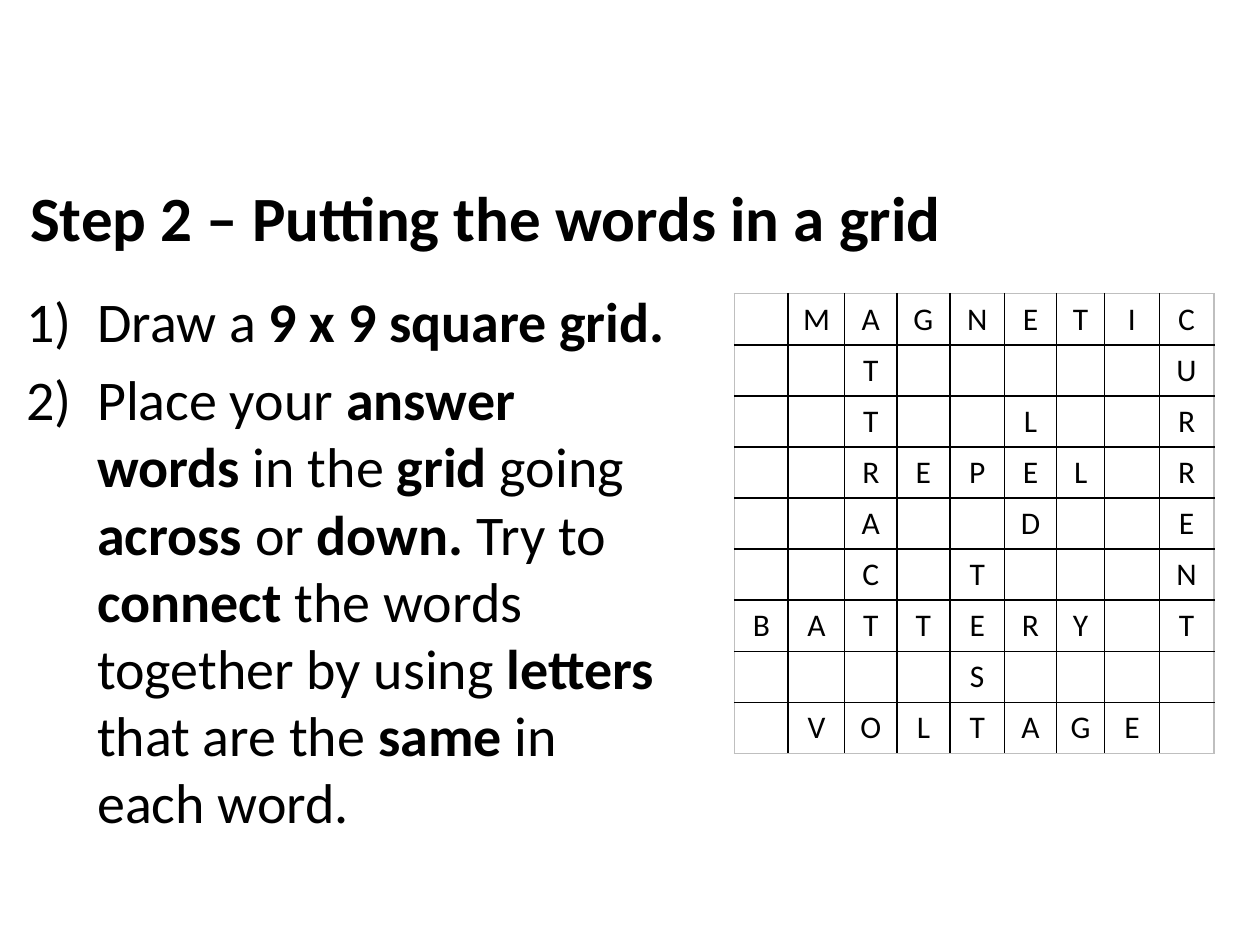
from lxml.etree import SubElement
from pptx import Presentation
from pptx.dml.color import RGBColor
from pptx.enum.text import MSO_ANCHOR, PP_ALIGN
from pptx.oxml.ns import qn
from pptx.util import Cm, Pt

BLACK = RGBColor(0x00, 0x00, 0x00)
WHITE = RGBColor(0xFF, 0xFF, 0xFF)
GREY = RGBColor(0xBF, 0xBF, 0xBF)
FONT = "Calibri"

# Content: each run is (text, bold)
HEADING = [("Step 2 – Putting the words in a grid", True)]
STEPS = [
    [("Draw a ", False), ("9 x 9 square grid.", True)],
    [
        ("Place your ", False), ("answer words ", True),
        ("in the ", False), ("grid", True),
        (" going ", False), ("across ", True),
        ("or ", False), ("down. ", True),
        ("Try to ", False), ("connect", True),
        (" the words together by using ", False), ("letters", True),
        (" that are the ", False), ("same", True),
        (" in each word.", False),
    ],
]

# Crossword words: (word, row, column, direction)
ACROSS, DOWN = (0, 1), (1, 0)
WORDS = [
    ("MAGNETIC", 0, 1, ACROSS),
    ("REPEL", 3, 2, ACROSS),
    ("BATTERY", 6, 0, ACROSS),
    ("VOLTAGE", 8, 1, ACROSS),
    ("ATTRACT", 0, 2, DOWN),
    ("LED", 2, 5, DOWN),
    ("TEST", 5, 4, DOWN),
    ("CURRENT", 0, 8, DOWN),
]
GRID_SIZE = 9
COLUMN_WIDTHS = [1.08, 1.14, 1.05, 1.07, 1.1, 1.05, 0.97, 1.1, 1.1]
ROW_HEIGHT = 1.03


def add_runs(paragraph, runs, size):
    for text, bold in runs:
        run = paragraph.add_run()
        run.text = text
        run.font.name = FONT
        run.font.size = Pt(size)
        run.font.bold = bold
        run.font.color.rgb = BLACK


def add_text(slide, left, top, width, height):
    frame = slide.shapes.add_textbox(Cm(left), Cm(top), Cm(width), Cm(height)).text_frame
    frame.word_wrap = True
    return frame


def number_paragraph(paragraph, indent):
    properties = paragraph._p.get_or_add_pPr()
    properties.set("marL", str(Cm(indent)))
    properties.set("indent", str(-Cm(indent)))
    SubElement(properties, qn("a:buFont"), typeface="+mj-lt")
    SubElement(properties, qn("a:buAutoNum"), type="arabicParenR")


def set_borders(cell, row, column):
    last = GRID_SIZE - 1
    outer_edges = {"lnL": column == 0, "lnR": column == last,
                   "lnT": row == 0, "lnB": row == last}
    properties = cell._tc.get_or_add_tcPr()
    for position, (edge, is_outer) in enumerate(outer_edges.items()):
        line = SubElement(properties, qn(f"a:{edge}"), w=str(Pt(1)))
        fill = SubElement(line, qn("a:solidFill"))
        SubElement(fill, qn("a:srgbClr"), val=str(GREY if is_outer else BLACK))
        properties.insert(position, line)


def add_crossword(slide, left, top):
    letters = {}
    for word, row, column, (down, right) in WORDS:
        for step, letter in enumerate(word):
            letters[row + step * down, column + step * right] = letter

    crossword = slide.shapes.add_table(
        GRID_SIZE, GRID_SIZE, Cm(left), Cm(top),
        Cm(sum(COLUMN_WIDTHS)), Cm(ROW_HEIGHT * GRID_SIZE)).table
    crossword.first_row = False
    crossword.horz_banding = False
    for column, width in zip(crossword.columns, COLUMN_WIDTHS):
        column.width = Cm(width)
    for row in crossword.rows:
        row.height = Cm(ROW_HEIGHT)

    for row in range(GRID_SIZE):
        for column in range(GRID_SIZE):
            cell = crossword.cell(row, column)
            cell.fill.solid()
            cell.fill.fore_color.rgb = WHITE
            cell.vertical_anchor = MSO_ANCHOR.MIDDLE
            cell.margin_left = cell.margin_right = Cm(0.1)
            cell.margin_top = cell.margin_bottom = Cm(0.1)
            set_borders(cell, row, column)
            paragraph = cell.text_frame.paragraphs[0]
            paragraph.alignment = PP_ALIGN.CENTER
            if (row, column) in letters:
                add_runs(paragraph, [(letters[row, column], False)], 18)


def main():
    deck = Presentation()
    deck.slide_width, deck.slide_height = Cm(25.4), Cm(19.05)
    slide = deck.slides.add_slide(deck.slide_layouts[6])

    # Heading
    heading = add_text(slide, 0.36, 3.48, 23.72, 1.8)
    add_runs(heading.paragraphs[0], HEADING, 36)

    # Numbered steps
    steps = add_text(slide, 0.28, 5.66, 13.44, 12.83)
    for index, runs in enumerate(STEPS):
        paragraph = steps.add_paragraph() if index else steps.paragraphs[0]
        paragraph.space_after = Pt(6)
        number_paragraph(paragraph, 1.43)
        add_runs(paragraph, runs, 32)

    # Crossword grid
    add_crossword(slide, 14.81, 5.92)

    deck.save("out.pptx")


if __name__ == "__main__":
    main()
